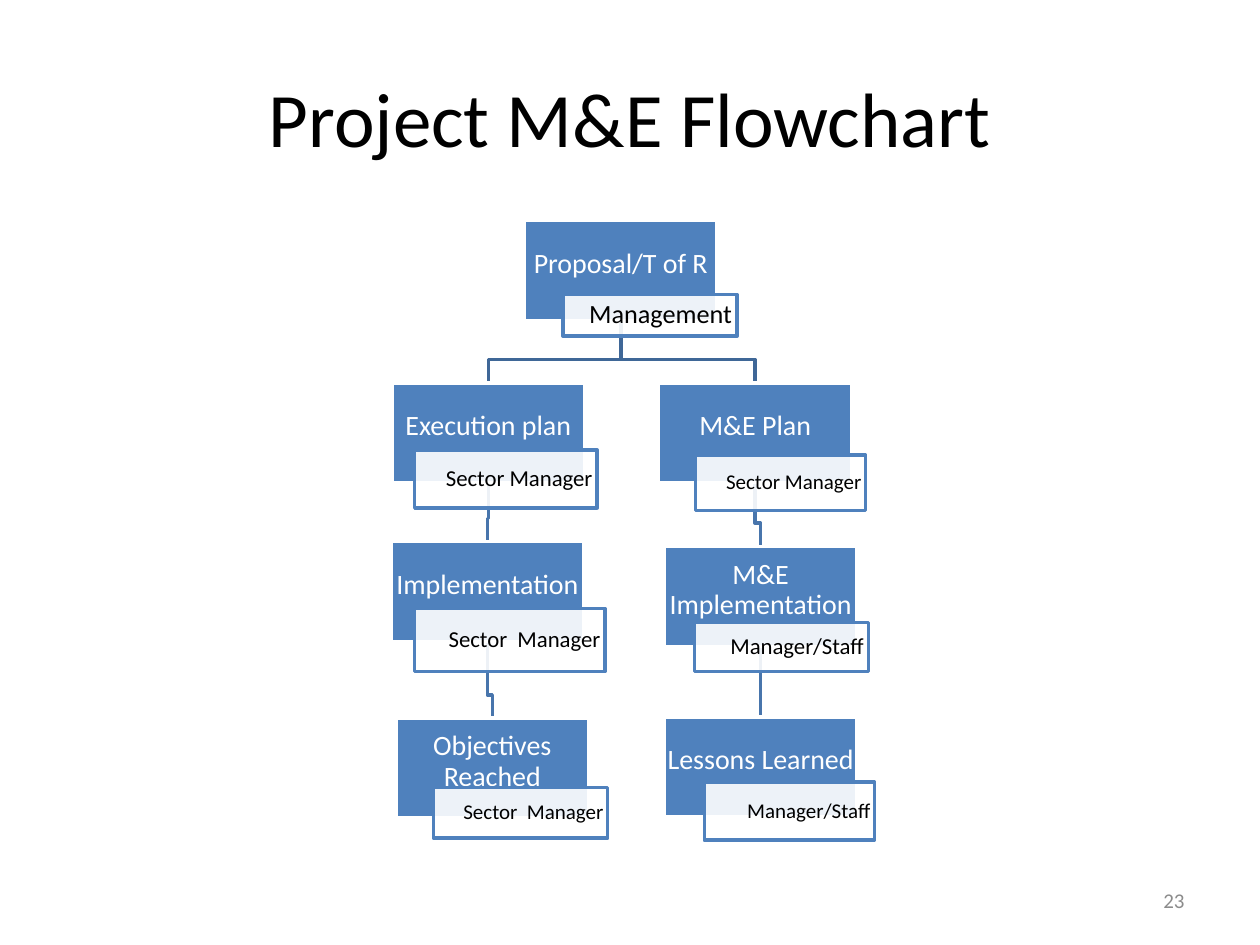
from dataclasses import dataclass

from lxml import etree
from pptx import Presentation
from pptx.dml.color import RGBColor
from pptx.enum.shapes import MSO_SHAPE
from pptx.enum.text import MSO_ANCHOR, PP_ALIGN
from pptx.oxml.ns import qn
from pptx.util import Cm, Pt

RECTANGLE = MSO_SHAPE.RECTANGLE
MIDDLE = MSO_ANCHOR.MIDDLE
CENTER, RIGHT = PP_ALIGN.CENTER, PP_ALIGN.RIGHT

FONT = "Calibri"
COLORS = {
    "stage": "4F81BD",
    "white": "FFFFFF",
    "black": "000000",
    "branch": "3F6797",
    "step": "4875AC",
    "number": "8C8C8C",
}
STAGE_WIDTH, STAGE_HEIGHT = 3.89, 2.01
BEND_ABOVE_STAGE = 0.47
LINE_WIDTH = 2


@dataclass(frozen=True)
class Role:
    label: str
    left: float
    top: float
    width: float
    height: float
    size: int
    side_inset: float


@dataclass(frozen=True)
class Stage:
    label: str
    left: float
    top: float
    role: Role

    @property
    def center(self) -> float:
        return self.left + STAGE_WIDTH / 2

    @property
    def bottom(self) -> float:
        return self.top + STAGE_HEIGHT


PROPOSAL = Stage("Proposal/T of R", 10.57, 4.45,
                 Role("Management", 11.35, 5.94, 3.51, 0.84, 15, 0.1))
EXECUTION_TRACK = [
    Stage("Execution plan", 7.9, 7.72,
          Role("Sector Manager", 8.36, 9.07, 3.68, 1.17, 13, 0.1)),
    Stage("Implementation", 7.88, 10.92,
          Role("Sector  Manager", 8.36, 12.27, 3.84, 1.27, 13, 0.1)),
    Stage("Objectives Reached", 7.98, 14.48,
          Role("Sector  Manager", 8.74, 15.88, 3.51, 1.02, 12, 0.08)),
]
MONITORING_TRACK = [
    Stage("M&E Plan", 13.28, 7.72,
          Role("Sector Manager", 14.02, 9.17, 3.43, 1.12, 12, 0.08)),
    Stage("M&E Implementation", 13.39, 11.02,
          Role("Manager/Staff", 14, 12.55, 3.51, 0.99, 13, 0.1)),
    Stage("Lessons Learned", 13.39, 14.45,
          Role("Manager/Staff", 14.2, 15.77, 3.43, 1.17, 12, 0.08)),
]


def rgb(name: str) -> RGBColor:
    return RGBColor.from_string(COLORS[name])


def write(holder, text: str, size: int, color: str, align) -> None:
    frame = holder.text_frame
    frame.text = text
    frame.word_wrap = True
    frame.vertical_anchor = MIDDLE
    paragraph = frame.paragraphs[0]
    paragraph.alignment = align
    font = paragraph.runs[0].font
    font.name = FONT
    font.size = Pt(size)
    font.color.rgb = rgb(color)


def add_box(slide, left: float, top: float, width: float, height: float,
            fill: str, line: str):
    box = slide.shapes.add_shape(RECTANGLE, Cm(left), Cm(top), Cm(width), Cm(height))
    box.shadow.inherit = False
    box.fill.solid()
    box.fill.fore_color.rgb = rgb(fill)
    box.line.color.rgb = rgb(line)
    box.line.width = Pt(LINE_WIDTH)
    return box


def set_spacing(box, side: float, bottom: float) -> None:
    frame = box.text_frame
    frame.margin_left = frame.margin_right = Cm(side)
    frame.margin_top, frame.margin_bottom = Cm(0.03), Cm(bottom)
    frame.paragraphs[0].line_spacing = 0.9


def add_stage(slide, stage: Stage) -> None:
    box = add_box(slide, stage.left, stage.top, STAGE_WIDTH, STAGE_HEIGHT, "stage", "white")
    write(box, stage.label, 16, "white", CENTER)
    set_spacing(box, 0.03, 0.28)

    role = stage.role
    tag = add_box(slide, role.left, role.top, role.width, role.height, "white", "stage")
    tint = tag.fill._xPr.find(f"{qn('a:solidFill')}/{qn('a:srgbClr')}")
    etree.SubElement(tint, qn("a:alpha")).set("val", "90000")
    write(tag, role.label, role.size, "black", RIGHT)
    set_spacing(tag, role.side_inset, 0.03)


def add_link(slide, parent: Stage, child: Stage, color: str) -> None:
    bend = child.top - BEND_ABOVE_STAGE
    route = [(parent.center, bend), (child.center, bend), (child.center, child.top)]
    builder = slide.shapes.build_freeform(Cm(parent.center), Cm(parent.bottom))
    builder.add_line_segments([(Cm(x), Cm(y)) for x, y in route], close=False)
    link = builder.convert_to_shape()
    link.shadow.inherit = False
    link.fill.background()
    link.line.color.rgb = rgb(color)
    link.line.width = Pt(LINE_WIDTH)


def main() -> None:
    presentation = Presentation()
    presentation.slide_width, presentation.slide_height = Cm(25.4), Cm(19.05)
    slide = presentation.slides.add_slide(presentation.slide_layouts[5])

    title = slide.shapes.title
    title.left, title.top, title.width, title.height = Cm(1.27), Cm(0.76), Cm(22.86), Cm(3.18)
    write(title, "Project M&E Flowchart", 44, "black", CENTER)

    number = slide.shapes.add_textbox(Cm(18.2), Cm(17.65), Cm(5.93), Cm(1.01))
    write(number, "23", 12, "number", RIGHT)

    tracks = [EXECUTION_TRACK, MONITORING_TRACK]
    for track in tracks:
        add_link(slide, PROPOSAL, track[0], "branch")
        for parent, child in zip(track, track[1:]):
            add_link(slide, parent, child, "step")
    for stage in [PROPOSAL, *EXECUTION_TRACK, *MONITORING_TRACK]:
        add_stage(slide, stage)

    presentation.save("out.pptx")


if __name__ == "__main__":
    main()
